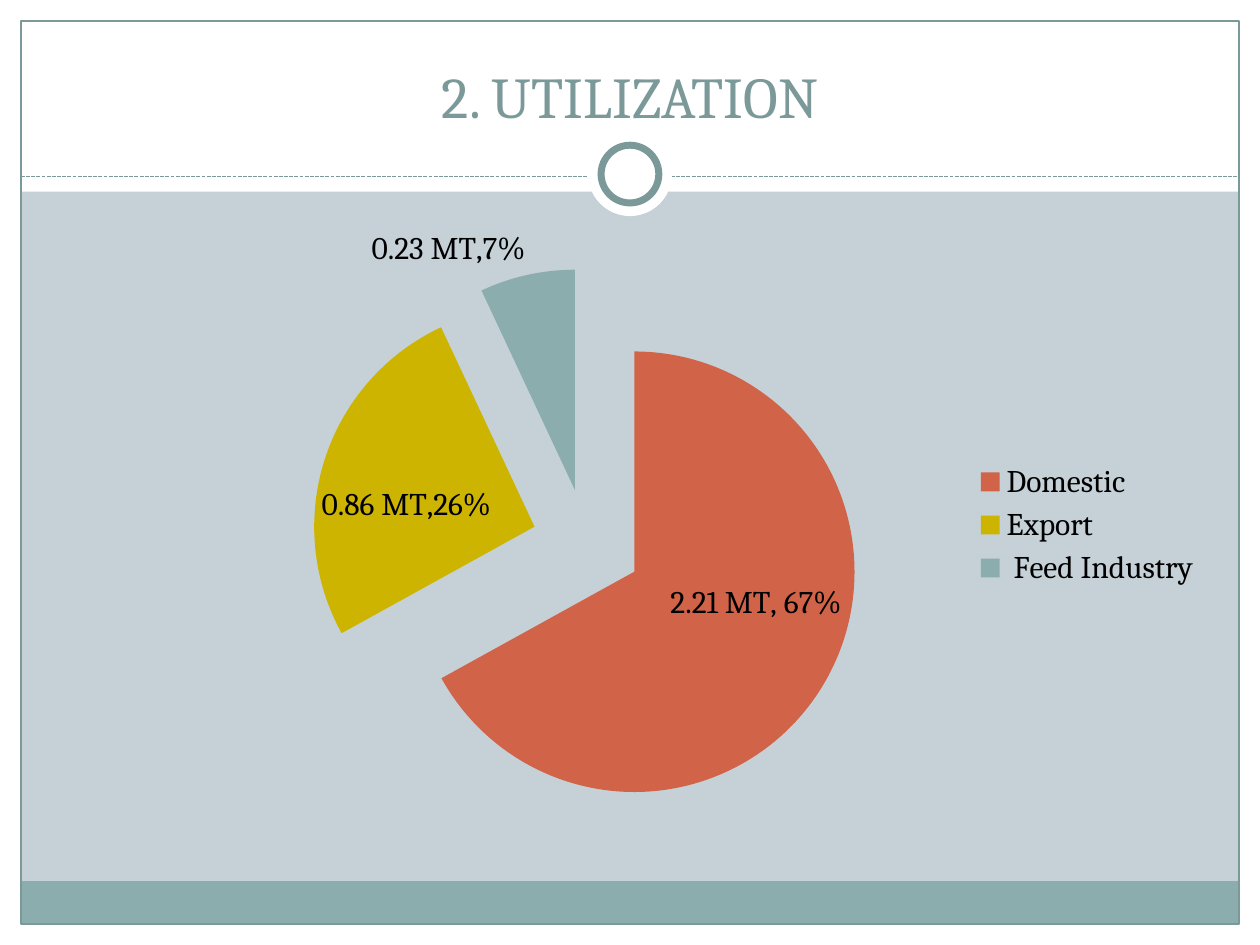
from dataclasses import dataclass

from lxml.etree import SubElement
from pptx import Presentation
from pptx.chart.data import CategoryChartData
from pptx.dml.color import RGBColor
from pptx.enum.chart import XL_CHART_TYPE, XL_LABEL_POSITION, XL_LEGEND_POSITION
from pptx.enum.dml import MSO_LINE
from pptx.enum.shapes import MSO_CONNECTOR, MSO_SHAPE
from pptx.enum.text import MSO_ANCHOR, PP_ALIGN
from pptx.oxml import parse_xml
from pptx.oxml.ns import nsdecls, qn
from pptx.util import Pt


@dataclass(frozen=True)
class Theme:
    font: str = "Cambria"
    title_size: int = 33
    chart_size: int = 18
    background: str = "C5D1D7"
    white: str = "FFFFFF"
    black: str = "000000"
    accent: str = "7C999A"
    band: str = "8CADAE"
    slices: tuple = ("D16349", "CCB400", "8CADAE")


THEME = Theme()
WIDTH, HEIGHT, MARGIN = 720, 540, 12

# Category, value, label, label position, label shift as a share of the chart
SLICES = [
    ("Domestic", 2.21, " 2.21 MT, 67%", XL_LABEL_POSITION.CENTER, (0.02, -0.04)),
    ("Export", 0.86, "0.86 MT,26%", XL_LABEL_POSITION.CENTER, (-0.02, 0.02)),
    (" Feed Industry", 0.23, "0.23 MT,7%", XL_LABEL_POSITION.OUTSIDE_END, None),
]


def color(value):
    return RGBColor.from_string(value)


def style_font(font, size, value):
    font.name = THEME.font
    font.size = Pt(size)
    font.color.rgb = color(value)


def add_block(page, box, fill=None, line=None, weight=0.75, kind=MSO_SHAPE.RECTANGLE):
    shape = page.shapes.add_shape(kind, *map(Pt, box))
    shape.shadow.inherit = False
    if fill:
        shape.fill.solid()
        shape.fill.fore_color.rgb = color(fill)
    else:
        shape.fill.background()
    if line:
        shape.line.color.rgb = color(line)
        shape.line.width = Pt(weight)
    else:
        shape.line.fill.background()


def add_circle(page, center, diameter, **style):
    left, top = (middle - diameter / 2 for middle in center)
    add_block(page, (left, top, diameter, diameter), THEME.white,
              kind=MSO_SHAPE.OVAL, **style)


def add_frame(page, box):
    left, top, width, height = box
    right, bottom = left + width, top + height
    inner = width - 2 * MARGIN
    header, band, rule = 109.5, 24.5, top + 100.8

    # White margins and header
    for edge in ((left, bottom - MARGIN, width, MARGIN),
                 (left, top, width, header),
                 (left, top, MARGIN, height),
                 (right - MARGIN, top, MARGIN, height)):
        add_block(page, edge, THEME.white)

    # Footer band and outline
    add_block(page, (left + MARGIN, bottom - MARGIN - band, inner, band), THEME.band)
    add_block(page, (left + MARGIN, top + MARGIN, inner, height - 2 * MARGIN),
              line=THEME.accent)

    # Dashed rule with the ring on it
    dashes = page.shapes.add_connector(
        MSO_CONNECTOR.STRAIGHT, Pt(left + MARGIN), Pt(rule), Pt(right - MARGIN), Pt(rule))
    dashes.line.color.rgb = color(THEME.accent)
    dashes.line.width = Pt(0.75)
    dashes.line.dash_style = MSO_LINE.SQUARE_DOT
    SubElement(dashes._element.spPr, qn("a:effectLst"))
    center = (left + width / 2, rule - 1.3)
    add_circle(page, center, 48)
    add_circle(page, center, 33, line=THEME.accent, weight=4)


def add_title(page, box, text):
    frame = page.shapes.add_textbox(*map(Pt, box)).text_frame
    frame.word_wrap = True
    frame.vertical_anchor = MSO_ANCHOR.BOTTOM
    frame.text = text
    para = frame.paragraphs[0]
    para.alignment = PP_ALIGN.CENTER
    style_font(para.runs[0].font, THEME.title_size, THEME.accent)


def manual_layout(**values):
    items = "".join(f'<c:{name} val="{value}"/>' for name, value in values.items())
    return parse_xml(f'<c:layout {nsdecls("c")}><c:manualLayout>{items}'
                     "</c:manualLayout></c:layout>")


def add_utilization_pie(page, box):
    data = CategoryChartData()
    data.categories = [item[0] for item in SLICES]
    data.add_series("Series 1", [item[1] for item in SLICES])
    chart = page.shapes.add_chart(XL_CHART_TYPE.PIE, *map(Pt, box), data).chart
    style_font(chart.font, THEME.chart_size, THEME.black)
    chart.has_title = False
    chart.has_legend = True
    chart.legend.position = XL_LEGEND_POSITION.RIGHT
    chart.legend.include_in_layout = False

    # Plot area
    plot = chart.plots[0]
    plot.vary_by_categories = True
    area = chart._chartSpace.chart.plotArea
    for old in area.findall(qn("c:layout")):
        area.remove(old)
    area.insert(0, manual_layout(layoutTarget="inner", xMode="edge", yMode="edge",
                                 x=0.23, y=0.09, w=0.47, h=0.88))

    # Exploded slices and their labels
    series = plot.series[0]
    series.format.line.fill.background()
    series._element.get_or_add_explosion().set("val", "25") if hasattr(
        series._element, "get_or_add_explosion") else series._element.find(
        qn("c:tx")).addnext(parse_xml(f'<c:explosion {nsdecls("c")} val="25"/>'))
    spot = series._element.find(qn("c:spPr"))
    spot.addnext(series._element.find(qn("c:explosion")))
    series.data_labels.show_value = True
    for index, (_, _, text, position, shift) in enumerate(SLICES):
        point = series.points[index]
        point.format.fill.solid()
        point.format.fill.fore_color.rgb = color(THEME.slices[index])
        point.format.line.fill.background()
        label = point.data_label
        label.text_frame.text = text
        span = label.text_frame.paragraphs[0].runs[0]
        style_font(span.font, THEME.chart_size, THEME.black)
        label.position = position
        if shift:
            holder = label._dLbl
            holder.insert(1, manual_layout(x=shift[0], y=shift[1]))


def main():
    deck = Presentation()
    deck.slide_width, deck.slide_height = Pt(WIDTH), Pt(HEIGHT)
    page = deck.slides.add_slide(deck.slide_layouts[6])
    page.background.fill.solid()
    page.background.fill.fore_color.rgb = color(THEME.background)

    add_frame(page, (0, 0, WIDTH, HEIGHT))
    add_title(page, (24, 18, 672, 60), "2. UTILIZATION")
    add_utilization_pie(page, (24, 120, 669.6, 360))
    deck.save("out.pptx")


if __name__ == "__main__":
    main()
